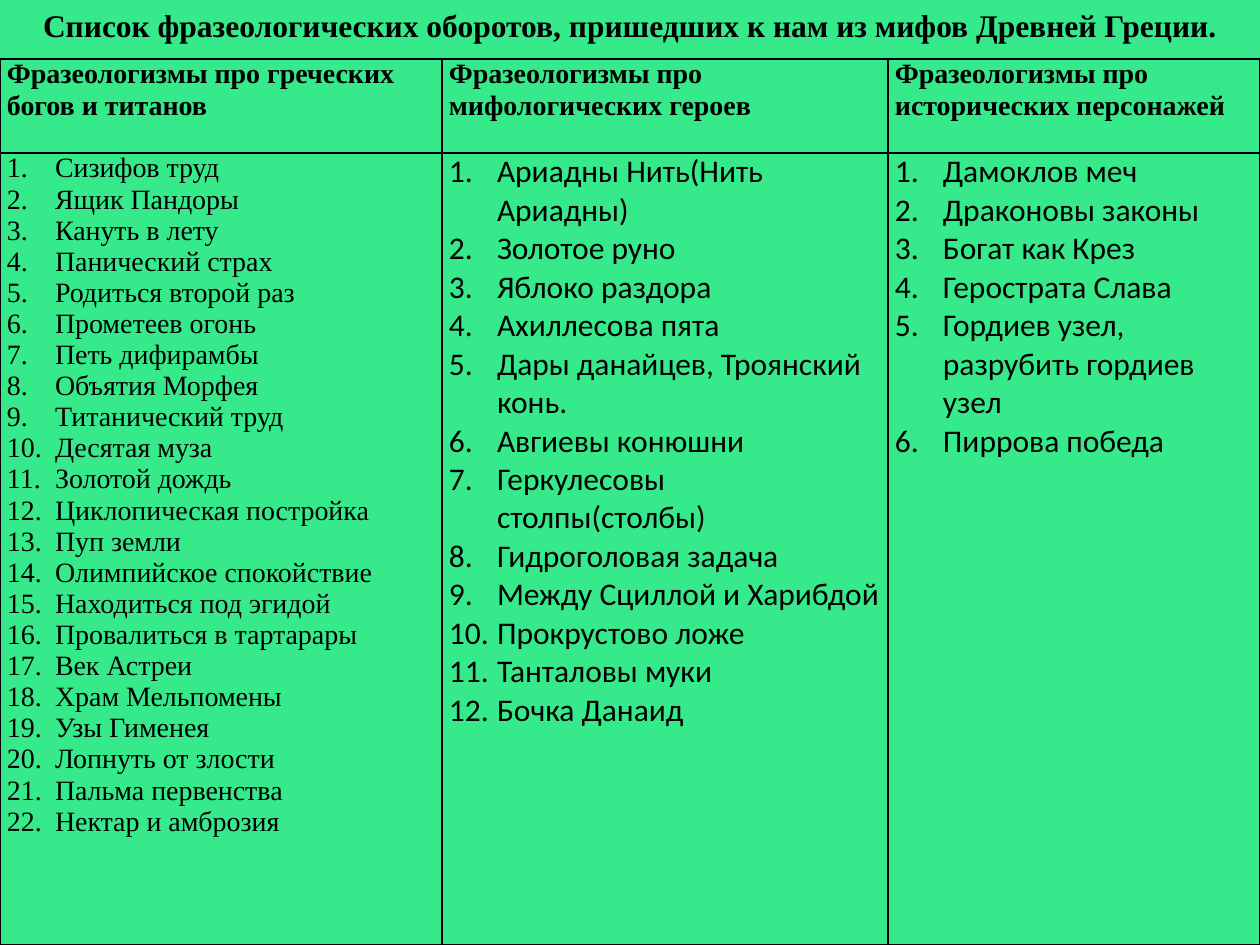
from lxml import etree
from pptx import Presentation
from pptx.dml.color import RGBColor
from pptx.enum.text import MSO_ANCHOR, MSO_AUTO_SIZE, PP_ALIGN
from pptx.oxml.ns import qn
from pptx.util import Emu, Pt

CENTER, LEFT = PP_ALIGN.CENTER, PP_ALIGN.LEFT
TOP = MSO_ANCHOR.TOP
GROW = MSO_AUTO_SIZE.SHAPE_TO_FIT_TEXT

WIDTH, HEIGHT = 1260, 945
TABLE_TOP = 59
ROW_HEIGHTS = [94, 792]
CELL_INSET = 7
NUMBER_INDENT = 48
SERIF, SANS = "Times New Roman", "Calibri"
BLACK, GREEN = "000000", "36EA8C"

TITLE = "Список фразеологических оборотов, пришедших к нам из мифов Древней Греции."

# Heading, column width, list font, list size, idioms
COLUMNS = [
    ("Фразеологизмы про греческих богов и титанов", 442, SERIF, 16, [
        "Сизифов труд", "Ящик Пандоры", "Кануть в лету", "Панический страх",
        "Родиться второй раз", "Прометеев огонь", "Петь дифирамбы",
        "Объятия Морфея", "Титанический труд", "Десятая муза",
        "Золотой дождь", "Циклопическая постройка", "Пуп земли",
        "Олимпийское спокойствие", "Находиться под эгидой",
        "Провалиться в тартарары", "Век Астреи", "Храм Мельпомены",
        "Узы Гименея", "Лопнуть от злости", "Пальма первенства",
        "Нектар и амброзия"]),
    ("Фразеологизмы про мифологических героев", 446, SANS, 18, [
        "Ариадны Нить(Нить Ариадны)", "Золотое руно", "Яблоко раздора",
        "Ахиллесова пята", "Дары данайцев, Троянский конь.",
        "Авгиевы конюшни", "Геркулесовы столпы(столбы)",
        "Гидроголовая задача", "Между Сциллой и Харибдой",
        "Прокрустово ложе", "Танталовы муки", "Бочка Данаид"]),
    ("Фразеологизмы про исторических персонажей", 372, SANS, 18, [
        "Дамоклов меч", "Драконовы законы", "Богат как Крез",
        "Герострата Слава", "Гордиев узел, разрубить гордиев узел",
        "Пиррова победа"]),
]


def px(length):
    return Emu(round(length * 914400 / 126))


def color(hex_string):
    return RGBColor.from_string(hex_string)


def write_lines(frame, lines, font, size, bold=False, align=LEFT):
    frame.text = "\n".join(lines)
    for paragraph in frame.paragraphs:
        paragraph.alignment = align
        for run in paragraph.runs:
            run.font.name = font
            run.font.size = Pt(size)
            run.font.bold = bold
            run.font.color.rgb = color(BLACK)


def number_lines(frame):
    for paragraph in frame.paragraphs:
        properties = paragraph._p.get_or_add_pPr()
        properties.set("marL", str(px(NUMBER_INDENT)))
        properties.set("indent", str(-px(NUMBER_INDENT)))
        etree.SubElement(properties, qn("a:buFont"), typeface="+mj-lt")
        etree.SubElement(properties, qn("a:buAutoNum"), type="arabicPeriod")


def style_cell(cell):
    cell.margin_left = cell.margin_right = px(CELL_INSET)
    cell.margin_top = cell.margin_bottom = 0
    cell.vertical_anchor = TOP
    properties = cell._tc.get_or_add_tcPr()
    for side in ("lnL", "lnR", "lnT", "lnB"):
        border = etree.SubElement(properties, qn("a:" + side), w=str(Pt(1)))
        fill = etree.SubElement(border, qn("a:solidFill"))
        etree.SubElement(fill, qn("a:srgbClr"), val=BLACK)
    cell.fill.background()


def add_title(slide):
    title = slide.shapes.add_textbox(0, 0, px(WIDTH), px(50))
    frame = title.text_frame
    frame.word_wrap = True
    frame.auto_size = GROW
    write_lines(frame, [TITLE], SERIF, 18, bold=True, align=CENTER)


def add_idiom_table(slide):
    table = slide.shapes.add_table(
        len(ROW_HEIGHTS), len(COLUMNS), 0, px(TABLE_TOP),
        px(WIDTH), px(sum(ROW_HEIGHTS))).table
    table.first_row = False
    table.horz_banding = False
    for row, height in zip(table.rows, ROW_HEIGHTS):
        row.height = px(height)

    for index, (heading, width, font, size, idioms) in enumerate(COLUMNS):
        table.columns[index].width = px(width)
        heading_cell, list_cell = table.cell(0, index), table.cell(1, index)
        write_lines(heading_cell.text_frame, [heading], SERIF, 16, bold=True)
        write_lines(list_cell.text_frame, idioms, font, size)
        number_lines(list_cell.text_frame)
        style_cell(heading_cell)
        style_cell(list_cell)


def main():
    deck = Presentation()
    deck.slide_width, deck.slide_height = px(WIDTH), px(HEIGHT)
    slide = deck.slides.add_slide(deck.slide_layouts[6])
    slide.background.fill.solid()
    slide.background.fill.fore_color.rgb = color(GREEN)
    add_title(slide)
    add_idiom_table(slide)
    deck.save("out.pptx")


if __name__ == "__main__":
    main()
